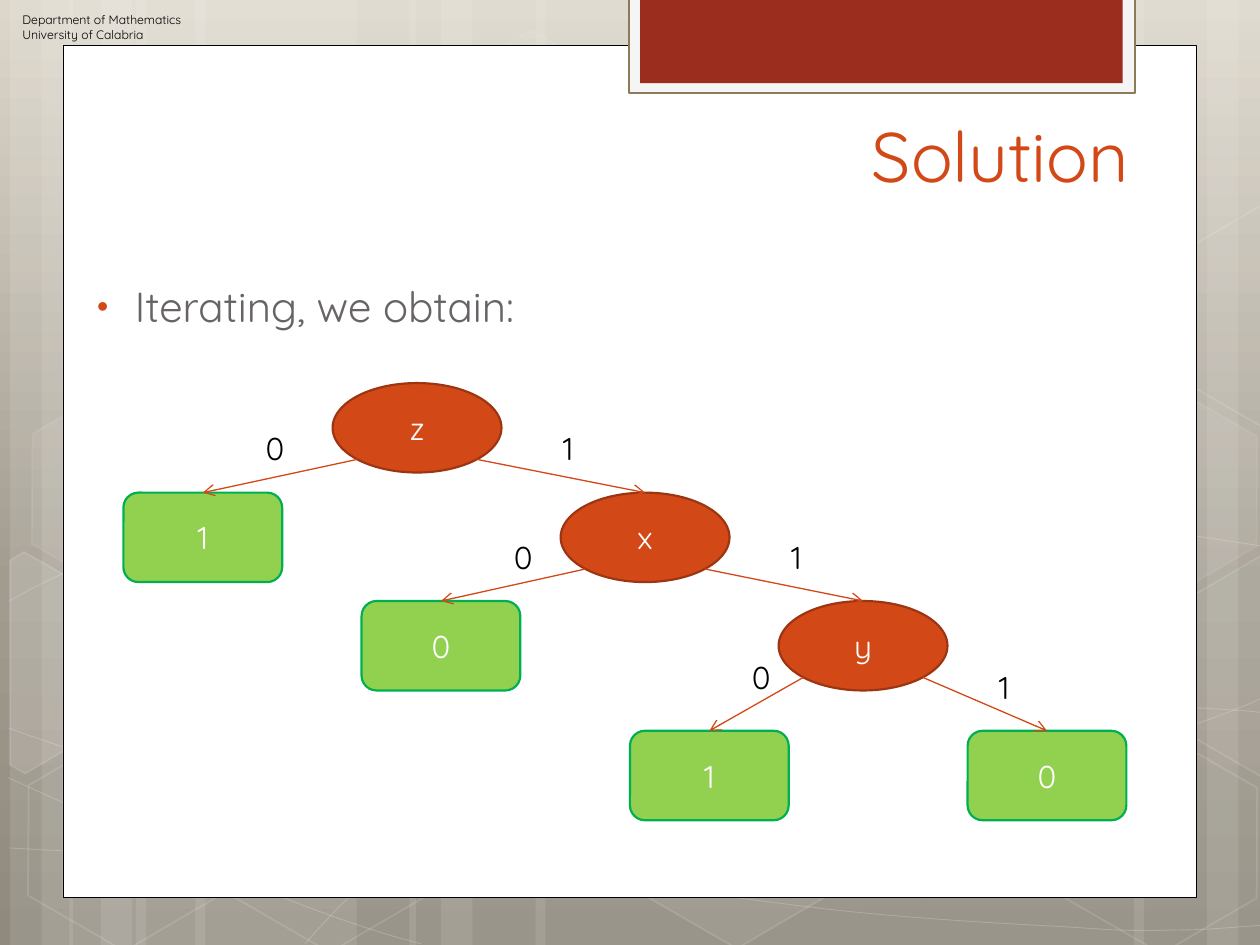
from copy import deepcopy
from math import sqrt

from lxml import etree
from pptx import Presentation
from pptx.dml.color import RGBColor
from pptx.enum import shapes, text
from pptx.oxml import ns
from pptx.util import Inches, Pt

KIND = shapes.MSO_SHAPE
FONT = "Quicksand"
WHITE, BLACK, ORANGE = "FFFFFF", "000000", "D34817"


def paint(shape, fill=None, line=None, width=1, fill_alpha=100, line_alpha=100):
    shape.shadow.inherit = False
    for target, color in ((shape.fill, fill), (shape.line.fill, line)):
        if color:
            target.solid()
            target.fore_color.rgb = RGBColor.from_string(color)
        else:
            target.background()
    if line:
        shape.line.width = Pt(width)
    for query, alpha in (("a:solidFill/a:srgbClr", fill_alpha), ("a:ln/a:solidFill/a:srgbClr", line_alpha)):
        for color in shape._element.spPr.xpath(query):
            if alpha < 100:
                etree.SubElement(color, ns.qn("a:alpha"), val=str(alpha * 1000))


def write(shape, lines, size, color, align="LEFT", anchor="TOP"):
    frame = shape.text_frame
    frame.text = "\n".join(lines)
    frame_format = {
        "word_wrap": True,
        "auto_size": text.MSO_AUTO_SIZE.NONE,
        "vertical_anchor": getattr(text.MSO_ANCHOR, anchor),
    }
    for name, value in frame_format.items():
        setattr(frame, name, value)
    for paragraph in frame.paragraphs:
        paragraph.alignment = getattr(text.PP_ALIGN, align)
        paragraph.space_before = Pt(0)
        font = paragraph.runs[0].font
        for name, value in {"name": FONT, "size": Pt(size), "bold": False}.items():
            setattr(font, name, value)
        font.color.rgb = RGBColor.from_string(color)


presentation = Presentation()
presentation.slide_width = Inches(10)
presentation.slide_height = Inches(7.5)
slide = presentation.slides.add_slide(presentation.slide_layouts[1])
canvas = slide.shapes

background = slide.background.fill
background.gradient()
background.gradient_angle = 270
stop_list = slide._element.find(".//" + ns.qn("a:gsLst"))
stop_list.insert(1, deepcopy(stop_list[0]))
gradient = ((0, "DDD7CB"), (0.62, "A29C90"), (1, "8F8A7D"))
for stop, (position, color) in zip(background.gradient_stops, gradient):
    stop.position = position
    stop.color.rgb = RGBColor.from_string(color)

stripes = [
    (1.08, 1.75), (0.08, 0.5), (0.33, 0.83), (1.55, 1.75), (0.55, 0.5), (0.8, 0.83),
    (7.33, 1.75), (9.58, 0.5), (9, 0.83), (4.25, 3.08), (3.25, 0.5), (3.5, 0.83),
]
for left, width in stripes:
    stripe = canvas.add_shape(KIND.RECTANGLE, Inches(left), 0, Inches(width), Inches(7.5))
    paint(stripe, WHITE, fill_alpha=10)

curves = [
    [(0.07, 6.73), (0.61, 6.76), (1.15, 6.79), (1.9, 6.78), (2.65, 6.77), (3.58, 6.75), (4.58, 6.65),
     (5.58, 6.55), (7, 6.36), (7.92, 6.17), (8.83, 5.98), (9.77, 5.68), (10.07, 5.51)],
    [(0.07, 4.77), (0.36, 4.61), (0.65, 4.46), (1.21, 4.31), (1.78, 4.16), (2.59, 3.94), (3.47, 3.87),
     (4.36, 3.8), (5.44, 3.79), (6.54, 3.87), (7.64, 3.95), (9.47, 4.26), (10.07, 4.34)],
    [(0.06, 6.17), (1.27, 6.72), (2.47, 7.27), (3.34, 7.49)],
    [(0.07, 5.78), (0.38, 5.89), (0.7, 6), (1.28, 6.16), (1.86, 6.31), (2.73, 6.56), (3.57, 6.73),
     (4.4, 6.9), (5.45, 7.08), (6.28, 7.18), (7.11, 7.29), (8, 7.33), (8.53, 7.36),
     (9.05, 7.4), (9.19, 7.38), (9.45, 7.38), (9.71, 7.37), (9.89, 7.35), (10.07, 7.34)],
    [(2.42, 7.49), (2.6, 7.29), (2.78, 7.09), (3.02, 6.91), (3.26, 6.73), (3.6, 6.53), (3.88, 6.39),
     (4.16, 6.25), (4.33, 6.19), (4.7, 6.09), (5.06, 5.99), (5.73, 5.85), (6.08, 5.78),
     (6.44, 5.71), (6.49, 5.71), (6.8, 5.69), (7.11, 5.66), (7.6, 5.63), (7.94, 5.62),
     (8.29, 5.61), (8.86, 5.62), (8.86, 5.62), (8.86, 5.62), (9.53, 5.62), (9.53, 5.62),
     (9.71, 5.63), (9.88, 5.64), (9.97, 5.65), (10.06, 5.66), (10.03, 5.65), (10.06, 5.66)],
]
for curve in curves:
    points = [tuple(map(Inches, point)) for point in curve]
    builder = canvas.build_freeform(*points[0])
    builder.add_line_segments(points[1:], close=False)
    thread = builder.convert_to_shape()
    paint(thread, line=WHITE, width=0.5, line_alpha=20)
    segments = thread._element.spPr.xpath(".//a:lnTo")
    outline = segments[0].getparent()
    for first in range(0, len(segments), 3):
        bezier = etree.SubElement(outline, ns.qn("a:cubicBezTo"))
        for segment in segments[first:first + 3]:
            bezier.append(segment[0])
            outline.remove(segment)

hexagons = [
    (3.34, 0.36, 4, 8), (4.97, 5.89, 6, 12), (0.11, 5.91, 0, 12), (0.14, 3.12, 7, 8), (1.74, 5.92, 0, 12),
    (7.53, 4.53, 10, 12), (8.34, 5.93, 0, 12), (8.34, 3.14, 7, 8),
]
for left, top, fill_alpha, line_alpha in hexagons:
    hexagon = canvas.add_shape(KIND.HEXAGON, Inches(left), Inches(top), Inches(1.75), Inches(1.52))
    hexagon.rotation = 30
    hexagon.adjustments[0] = 0.285
    paint(hexagon, WHITE if fill_alpha else None, WHITE, 1, fill_alpha, line_alpha)

cut_hexagons = [
    ([(0.08, 4.45), (0.19, 4.38), (0.96, 4.82), (0.95, 5.7), (0.2, 6.14), (0.08, 6.07)], 10),
    ([(9.26, 4.85), (10.01, 4.41), (10.09, 4.46), (10.09, 6.13), (10.02, 6.17), (9.26, 5.73)], 4),
    ([(9.26, 2.07), (10.01, 1.63), (10.1, 1.68), (10.09, 3.35), (10.02, 3.39), (9.26, 2.95)], 0),
]
for corners, fill_alpha in cut_hexagons:
    points = [tuple(map(Inches, corner)) for corner in corners]
    builder = canvas.build_freeform(*points[0])
    builder.add_line_segments(points[1:])
    paint(builder.convert_to_shape(), WHITE if fill_alpha else None, WHITE, 1, fill_alpha, 12)

panels = [
    ((0.5, 0.36, 9, 6.76), WHITE, BLACK, 0.5),
    ((4.99, -0.02, 4.02, 0.76), "F5F5F5", "8B7B57", 1.25),
    ((5.08, -0.02, 3.83, 0.68), "9B2D1F", None, 0),
]
for box, fill, line, width in panels:
    paint(canvas.add_shape(KIND.RECTANGLE, *map(Inches, box)), fill, line, width)

department = canvas.add_textbox(*map(Inches, (0.08, 0.05, 2.2, 0.34)))
write(department, ["Department of Mathematics", "University of Calabria"], 7, BLACK)

title, body = slide.placeholders[0], slide.placeholders[1]
places = ((title, (1.38, 0.84, 7.68, 1.25)), (body, (0.59, 2.18, 8.74, 4.25)))
for placeholder, box in places:
    for name, value in zip(("left", "top", "width", "height"), box):
        setattr(placeholder, name, Inches(value))
    canvas._spTree.append(placeholder._element)
write(title, ["Solution"], 40, ORANGE, "RIGHT")
write(body, ["Iterating, we obtain:"], 24, "696464")
properties = body.text_frame.paragraphs[0]._p.get_or_add_pPr()
properties.set("marL", str(Inches(0.38)))
properties.set("indent", str(Inches(-0.3)))
bullet_color = etree.SubElement(properties, ns.qn("a:buClr"))
etree.SubElement(bullet_color, ns.qn("a:srgbClr"), val=ORANGE)
etree.SubElement(properties, ns.qn("a:buSzPct"), val="76000")
etree.SubElement(properties, ns.qn("a:buFont"), typeface="Arial")
etree.SubElement(properties, ns.qn("a:buChar"), char="•")

HEIGHT = 0.71
tests = [(2.64, 3.04, "z"), (4.45, 3.91, "x"), (6.18, 4.77, "y")]
leaves = [(0.98, 3.91, "1"), (2.87, 4.77, "0"), (5, 5.8, "1"), (7.68, 5.8, "0")]
styles = [
    (tests, KIND.OVAL, 1.34, ORANGE, "9C3511"),
    (leaves, KIND.ROUNDED_RECTANGLE, 1.26, "92D050", "00B050"),
]
nodes = []
for group, kind, width, fill, line in styles:
    for left, top, label in group:
        node = canvas.add_shape(kind, Inches(left), Inches(top), Inches(width), Inches(HEIGHT))
        paint(node, fill, line, 1.25)
        write(node, [label], 18, WHITE, "CENTER", "MIDDLE")
        nodes.append(node)

z, x, y, z_leaf, x_leaf, y_left_leaf, y_right_leaf = nodes
edges = [(z, z_leaf, -1), (z, x, 1), (x, x_leaf, -1), (x, y, 1), (y, y_left_leaf, -1), (y, y_right_leaf, 1)]
for parent, child, side in edges:
    start_x = parent.left + parent.width / 2 * (1 + side / sqrt(2))
    start_y = parent.top + parent.height / 2 * (1 + 1 / sqrt(2))
    ends = (start_x, start_y, child.left + child.width / 2, child.top)
    edge = canvas.add_connector(shapes.MSO_CONNECTOR.STRAIGHT, *map(int, ends))
    edge.line.color.rgb = RGBColor.from_string(ORANGE)
    edge.line.width = Pt(0.75)
    edge_properties = edge._element.spPr
    etree.SubElement(edge_properties.find(ns.qn("a:ln")), ns.qn("a:tailEnd"), type="arrow")
    etree.SubElement(edge_properties, ns.qn("a:effectLst"))

edge_labels = [
    (2.01, 3.36, "0"), (3.98, 4.22, "0"), (5.87, 5.17, "0"),
    (4.37, 3.36, "1"), (6.18, 4.22, "1"), (7.83, 5.25, "1"),
]
for left, top, value in edge_labels:
    write(canvas.add_textbox(*map(Inches, (left, top, 0.24, 0.4))), [value], 18, BLACK)

presentation.save("out.pptx")
